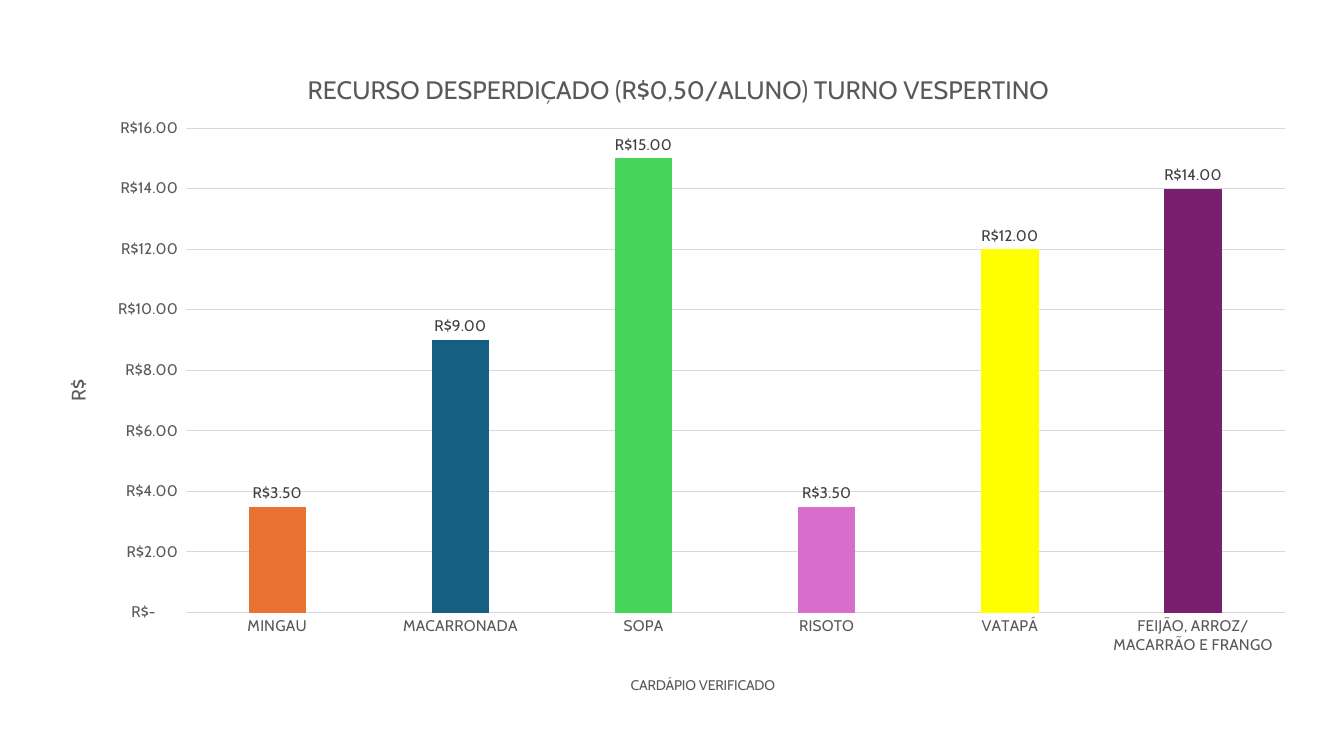
from lxml import etree
from pptx import Presentation
from pptx.chart import data as chart_data
from pptx.dml import color
from pptx.enum import chart as chart_enum
from pptx.oxml import ns
from pptx.util import Cm, Pt

FONT = "Cabin"
GREY = "595959"
RULE = "D9D9D9"
MONEY = '_("R$"* #,##0.00_);_("R$"* \\(#,##0.00\\);_("R$"* "-"??_);_(@_)'

# Dish, wasted amount in R$, bar colour
DISHES = [
    ("MINGAU", 3.5, "E97132"),
    ("MACARRONADA", 9, "156082"),
    ("SOPA", 15, "47D45A"),
    ("RISOTO", 3.5, "D86ECC"),
    ("VATAPÁ", 12, "FFFF00"),
    ("FEIJÃO, ARROZ/MACARRÃO E FRANGO", 14, "78206E"),
]


def rgb(value):
    return color.RGBColor.from_string(value)


def style_font(font, size, colour):
    font.name = FONT
    font.size = Pt(size)
    font.bold = False
    font.color.rgb = rgb(colour)


def style_line(line, colour):
    line.color.rgb = rgb(colour)
    line.width = Pt(0.75)


def place(element, position, **fractions):
    """Give a chart part a manual layout in fractions of the chart."""
    for old in element.findall(ns.qn("c:layout")):
        element.remove(old)
    layout = etree.Element(ns.qn("c:layout"))
    manual = etree.SubElement(layout, ns.qn("c:manualLayout"))

    def setting(name, value):
        etree.SubElement(manual, ns.qn("c:" + name)).set("val", str(value))

    if "w" in fractions:
        setting("layoutTarget", "inner")
    setting("xMode", "edge")
    setting("yMode", "edge")
    for name, value in fractions.items():
        setting(name, value)
    element.insert(position, layout)


def add_title(owner, wording, size, x, y):
    """Title a chart or an axis."""
    owner.has_title = True
    title = owner.chart_title if hasattr(owner, "chart_title") else owner.axis_title
    title.text_frame.text = wording
    style_font(title.text_frame.paragraphs[0].runs[0].font, size, GREY)
    place(title._element, 1, x=x, y=y)


def style_axis(axis):
    axis.major_tick_mark = chart_enum.XL_TICK_MARK.NONE
    axis.minor_tick_mark = chart_enum.XL_TICK_MARK.NONE
    style_font(axis.tick_labels.font, 11, GREY)


def style_bars(plot):
    plot.gap_width = 219
    plot.overlap = -27
    plot.vary_by_categories = False
    series = plot.series[0]
    series.invert_if_negative = False
    for index, (_, _, colour) in enumerate(DISHES):
        fill = series.points[index].format.fill
        fill.solid()
        fill.fore_color.rgb = rgb(colour)

    # Value labels above the bars
    labels = series.data_labels
    labels.show_value = True
    labels.position = chart_enum.XL_LABEL_POSITION.OUTSIDE_END
    labels.number_format = MONEY
    labels.number_format_is_linked = False
    style_font(labels.font, 11, "404040")


def add_waste_chart(slide):
    values = chart_data.CategoryChartData(number_format=MONEY)
    values.categories = [dish for dish, _, _ in DISHES]
    values.add_series("Series 1", [amount for _, amount, _ in DISHES])
    chart = slide.shapes.add_chart(
        chart_enum.XL_CHART_TYPE.COLUMN_CLUSTERED,
        Cm(0.89), Cm(1.04), Cm(32.13), Cm(16.84), values,
    ).chart
    chart.has_legend = False
    style_font(chart.font, 10, "000000")
    style_bars(chart.plots[0])

    # Axes
    dishes, amounts = chart.category_axis, chart.value_axis
    style_axis(dishes)
    style_line(dishes.format.line, RULE)
    style_axis(amounts)
    amounts.format.line.fill.background()
    amounts.minimum_scale = 0
    amounts.maximum_scale = 16
    amounts.major_unit = 2
    amounts.has_major_gridlines = True
    style_line(amounts.major_gridlines.format.line, RULE)
    amounts.tick_labels.number_format = MONEY
    amounts.tick_labels.number_format_is_linked = False

    # Titles and plot position
    add_title(chart, "RECURSO DESPERDIÇADO (R$0,50/ALUNO) TURNO VESPERTINO", 18, 0.21, 0.04)
    add_title(dishes, "CARDÁPIO VERIFICADO", 10, 0.465, 0.945)
    add_title(amounts, "R$", 14, 0.02, 0.5)
    plot_area = chart._chartSpace.find(".//" + ns.qn("c:plotArea"))
    place(plot_area, 0, x=0.118, y=0.13, w=0.862, h=0.725)


def main():
    presentation = Presentation()
    presentation.slide_width = Cm(33.87)
    presentation.slide_height = Cm(19.05)
    slide = presentation.slides.add_slide(presentation.slide_layouts[6])
    add_waste_chart(slide)
    presentation.save("out.pptx")


if __name__ == "__main__":
    main()
